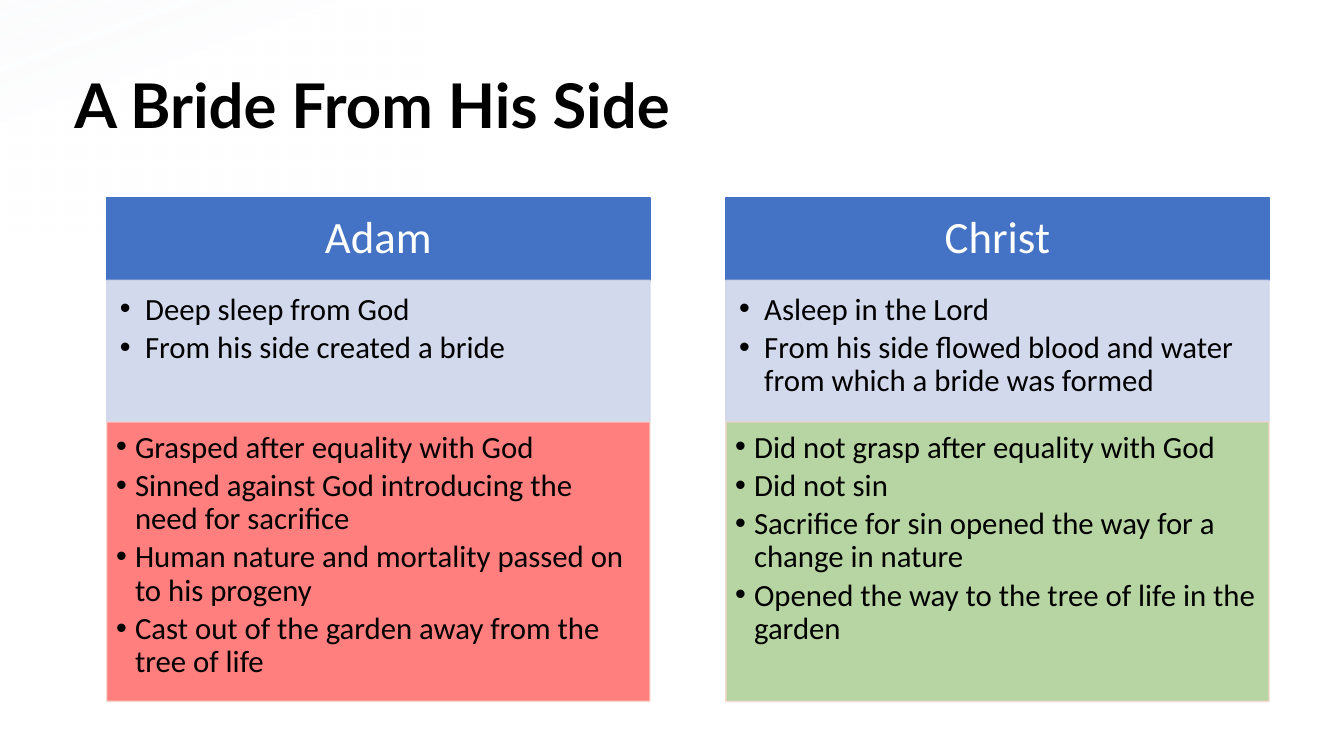
from lxml.etree import SubElement
from pptx import Presentation
from pptx.dml.color import RGBColor
from pptx.enum.shapes import MSO_SHAPE as Preset
from pptx.enum.text import MSO_ANCHOR as Anchor, PP_ALIGN as Align
from pptx.oxml.ns import qn
from pptx.util import Pt

# Content
TITLE = "A Bride From His Side"
COLUMNS = [
    {
        "name": "Adam",
        "sleep": ["Deep sleep from God", "From his side created a bride"],
        "outcome": [
            "Grasped after equality with God",
            "Sinned against God introducing the need for sacrifice",
            "Human nature and mortality passed on to his progeny",
            "Cast out of the garden away from the tree of life",
        ],
        "outcome_fill": "red",
    },
    {
        "name": "Christ",
        "sleep": [
            "Asleep in the Lord",
            "From his side flowed blood and water from which a bride was formed",
        ],
        "outcome": [
            "Did not grasp after equality with God",
            "Did not sin",
            "Sacrifice for sin opened the way for a change in nature",
            "Opened the way to the tree of life in the garden",
        ],
        "outcome_fill": "green",
    },
]

# Look
COLORS = {
    "black": "000000", "white": "FFFFFF", "blue": "4472C4", "pale": "CFD5EA",
    "red": "FF0000", "green": "70AD47", "edge": "F8D7CE", "haze": "F6F8FC",
}
HAZE_STOPS = [(0, "haze", 25), (34, "white", 70), (53, "white", 85), (67, "white", 100)]
TITLE_FONT = {"name": "Lato", "size": Pt(44), "bold": True}
HEAD_FONT = {"name": "Calibri", "size": Pt(32)}
LIST_FONT = {"name": "Calibri", "size": Pt(22)}

# Column grid
LEFT, WIDTH, PITCH = 76.3, 388, 442.2
TOP, HEAD_HEIGHT, SLEEP_HEIGHT, OUTCOME_HEIGHT = 141.1, 59.1, 101.3, 199.5


def set_alpha(fill, color, alpha):
    fill.solid()
    fill.fore_color.rgb = RGBColor.from_string(COLORS[color])
    if alpha < 100:
        for node in fill._xPr.iter(qn("a:srgbClr")):
            if node.getparent().getparent() is fill._xPr:
                SubElement(node, qn("a:alpha"), val=str(alpha * 1000))


def add_box(page, area, fill, line=None, alpha=100, line_alpha=100):
    box = page.shapes.add_shape(Preset.RECTANGLE, *map(Pt, area))
    box.shadow.inherit = False
    set_alpha(box.fill, fill, alpha)
    if line:
        box.line.width = Pt(1)
        set_alpha(box.line.fill, line, line_alpha)
    else:
        box.line.fill.background()
    return box


def write(box, lines, font, color, anchor, insets, align=Align.LEFT, indent=0):
    frame = box.text_frame
    frame.word_wrap = True
    frame.vertical_anchor = anchor
    for side, inset in zip(("left", "top", "right", "bottom"), insets):
        setattr(frame, f"margin_{side}", Pt(inset))
    for index, line in enumerate(lines):
        para = frame.paragraphs[0] if index == 0 else frame.add_paragraph()
        para.alignment = align
        para.line_spacing = 0.9
        if indent:
            para.level = 1
            para.space_after = Pt(3.6)
            props = para._p.get_or_add_pPr()
            props.set("marL", str(Pt(indent)))
            props.set("indent", str(-Pt(indent)))
            SubElement(props, qn("a:buFont"), typeface="Arial")
            SubElement(props, qn("a:buChar"), char="•")
        span = para.add_run()
        span.text = line
        for key, value in font.items():
            setattr(span.font, key, value)
        span.font.color.rgb = RGBColor.from_string(COLORS[color])


def add_haze(page):
    haze = add_box(page, (0, 0, 302.4, 170.6), "white")
    haze.fill.gradient()
    gradient = haze.fill._xPr.find(qn("a:gradFill"))
    stops = gradient.find(qn("a:gsLst"))
    for stop in list(stops):
        stops.remove(stop)
    for position, color, alpha in HAZE_STOPS:
        stop = SubElement(stops, qn("a:gs"), pos=str(position * 1000))
        node = SubElement(stop, qn("a:srgbClr"), val=COLORS[color])
        SubElement(node, qn("a:alpha"), val=str(alpha * 1000))
    gradient.find(qn("a:lin")).set("ang", str(70 * 60000))


def add_column(page, left, column):
    # Heading
    head = add_box(page, (left, TOP, WIDTH, HEAD_HEIGHT), "blue", "blue")
    write(head, [column["name"]], HEAD_FONT, "white", Anchor.MIDDLE,
          (18, 10, 18, 10), Align.CENTER)
    # Sleep and bride
    top = TOP + HEAD_HEIGHT
    sleep = add_box(page, (left, top, WIDTH, SLEEP_HEIGHT), "pale", "pale", 90, 90)
    write(sleep, column["sleep"], LIST_FONT, "black", Anchor.TOP,
          (9.4, 9.4, 12.5, 14), indent=18)
    # Outcome
    top += SLEEP_HEIGHT
    outcome = add_box(page, (left, top, WIDTH, OUTCOME_HEIGHT),
                      column["outcome_fill"], "edge", 50, 90)
    write(outcome, column["outcome"], LIST_FONT, "black", Anchor.TOP,
          (6.7, 6.7, 8.9, 10), indent=13.5)


def main():
    deck = Presentation()
    deck.slide_width, deck.slide_height = Pt(960), Pt(540)
    page = deck.slides.add_slide(deck.slide_layouts[6])
    add_haze(page)
    title = page.shapes.add_textbox(*map(Pt, (46.1, 25.2, 868.3, 104.4)))
    write(title, [TITLE], TITLE_FONT, "black", Anchor.MIDDLE, (7.2, 3.6, 7.2, 3.6))
    for index, column in enumerate(COLUMNS):
        add_column(page, LEFT + index * PITCH, column)
    deck.save("out.pptx")


if __name__ == "__main__":
    main()
